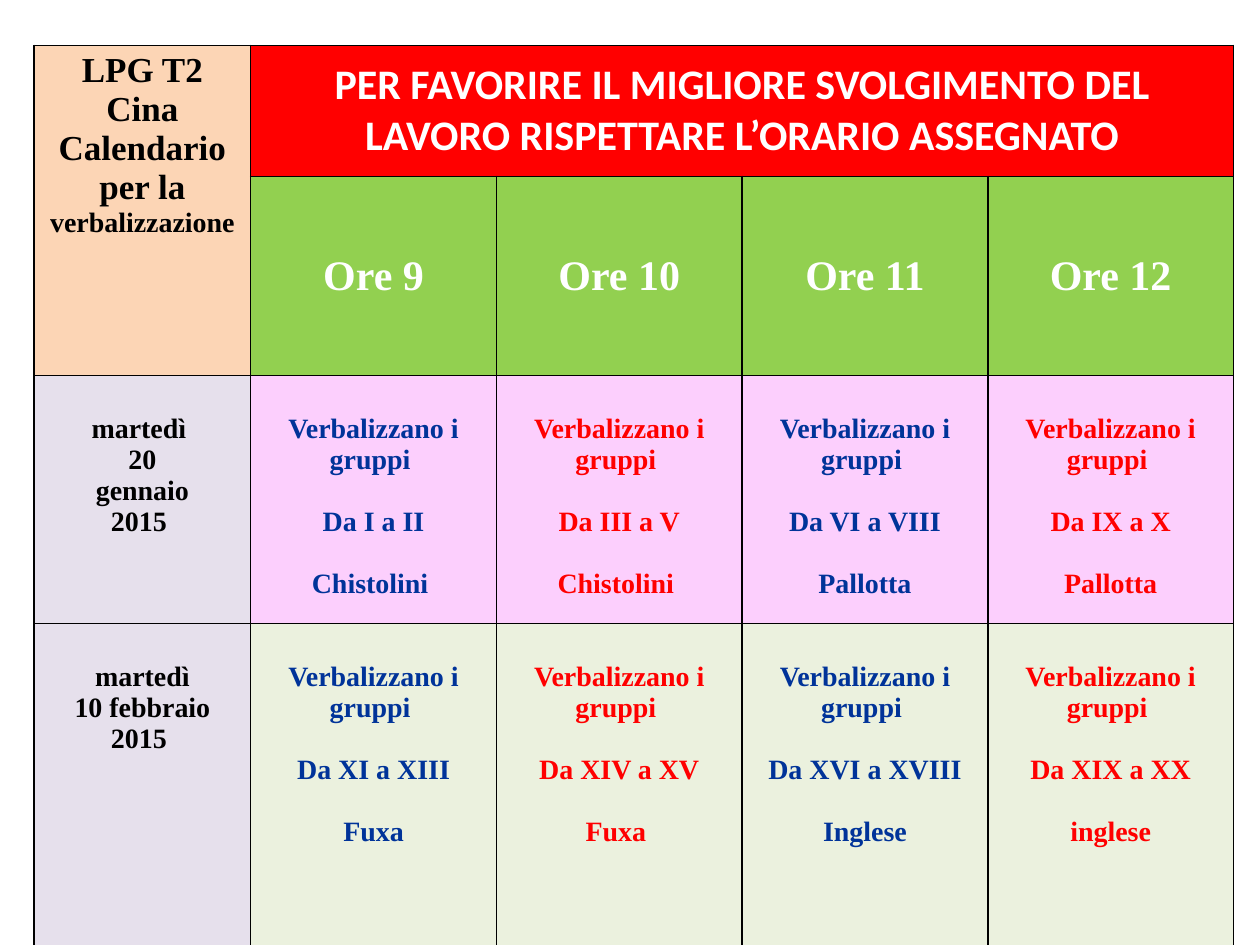
from lxml.etree import SubElement
from pptx import Presentation
from pptx.dml.color import RGBColor
from pptx.enum.text import MSO_ANCHOR, PP_ALIGN
from pptx.oxml.ns import qn
from pptx.util import Inches, Pt

BLACK = RGBColor(0x00, 0x00, 0x00)
WHITE = RGBColor(0xFF, 0xFF, 0xFF)
RED = RGBColor(0xFF, 0x00, 0x00)
BLUE = RGBColor(0x00, 0x33, 0x99)
PEACH = RGBColor(0xFC, 0xD5, 0xB5)
GREEN = RGBColor(0x92, 0xD0, 0x50)
LILAC = RGBColor(0xE6, 0xE0, 0xEC)
PINK = RGBColor(0xFC, 0xCF, 0xFD)
SAGE = RGBColor(0xEB, 0xF1, 0xDE)

COLS = [1.72, 1.95, 1.95, 1.95, 1.95]
ROWS = [1.04, 0.73, 1.97, 2.61]
HOURS = ["Ore 9", "Ore 10", "Ore 11", "Ore 12"]
DAYS = [
    (["martedì ", "20", " gennaio ", "2015 "], PINK, [
        ("Da I a II", "Chistolini "),
        ("Da III a V", "Chistolini "),
        ("Da VI a VIII", "Pallotta"),
        ("Da IX a X", "Pallotta"),
    ]),
    (["martedì", "10 febbraio 2015 "], SAGE, [
        ("Da XI a XIII", "Fuxa"),
        ("Da XIV a XV", "Fuxa "),
        ("Da XVI a XVIII", "Inglese"),
        ("Da XIX a XX", "inglese"),
    ]),
]


class Board:
    font = "Times New Roman"
    line = Pt(1)
    gap = Pt(17.7)

    def __init__(self, slide):
        self.slide = slide

    def grid(self, left, top, cols, rows):
        frame = self.slide.shapes.add_table(
            len(rows), len(cols), Inches(left), Inches(top),
            Inches(sum(cols)), Inches(sum(rows)))
        table = frame.table
        table.horz_banding = False
        table.first_row = False
        for col, width in zip(table.columns, cols):
            col.width = Inches(width)
        for row, height in zip(table.rows, rows):
            row.height = Inches(height)
        for cell in table.iter_cells():
            self.edge(cell)
        return table

    def edge(self, cell):
        props = cell._tc.get_or_add_tcPr()
        for side in ("lnL", "lnR", "lnT", "lnB"):
            line = SubElement(props, qn(f"a:{side}"), w=str(self.line))
            fill = SubElement(line, qn("a:solidFill"))
            SubElement(fill, qn("a:srgbClr"), val=str(BLACK))

    def style(self, run, size, ink, font=None):
        run.font.name = font or self.font
        run.font.size = Pt(size)
        run.font.bold = True
        run.font.color.rgb = ink

    def fill(self, cell, lines, size, ink, back, font=None,
             mid=False, top=0.05, gap=0):
        cell.fill.solid()
        cell.fill.fore_color.rgb = back
        cell.margin_top = Inches(top)
        cell.vertical_anchor = MSO_ANCHOR.MIDDLE if mid else MSO_ANCHOR.TOP
        cell.text_frame.text = "\n".join(lines)
        for rank, para in enumerate(cell.text_frame.paragraphs):
            para.alignment = PP_ALIGN.CENTER
            if rank and gap:
                para.space_before = gap
            for run in para.runs:
                self.style(run, size, ink, font)


def main():
    deck = Presentation()
    deck.slide_width, deck.slide_height = Inches(10), Inches(7.5)
    board = Board(deck.slides.add_slide(deck.slide_layouts[6]))
    table = board.grid(0.27, 0.36, COLS, ROWS)

    title = table.cell(0, 0)
    title.merge(table.cell(1, 0))
    board.fill(title, ["LPG T2 Cina", "Calendario per la "], 20, BLACK, PEACH)
    run = title.text_frame.paragraphs[1].add_run()
    run.text = "verbalizzazione"
    board.style(run, 16, BLACK)

    banner = table.cell(0, 1)
    banner.merge(table.cell(0, 4))
    board.fill(
        banner,
        ["PER FAVORIRE IL MIGLIORE SVOLGIMENTO DEL "
         "LAVORO RISPETTARE L’ORARIO ASSEGNATO"],
        24, WHITE, RED, font="Calibri", mid=True)

    for col, hour in enumerate(HOURS, 1):
        board.fill(table.cell(1, col), [hour], 24, WHITE, GREEN, mid=True)

    for row, (date, back, slots) in enumerate(DAYS, 2):
        board.fill(table.cell(row, 0), date, 16, BLACK, LILAC, top=0.3)
        for col, slot in enumerate(slots, 1):
            board.fill(
                table.cell(row, col), ["Verbalizzano i gruppi ", *slot],
                16, BLUE if col % 2 else RED, back, top=0.3, gap=board.gap)

    deck.save("out.pptx")


if __name__ == "__main__":
    main()
